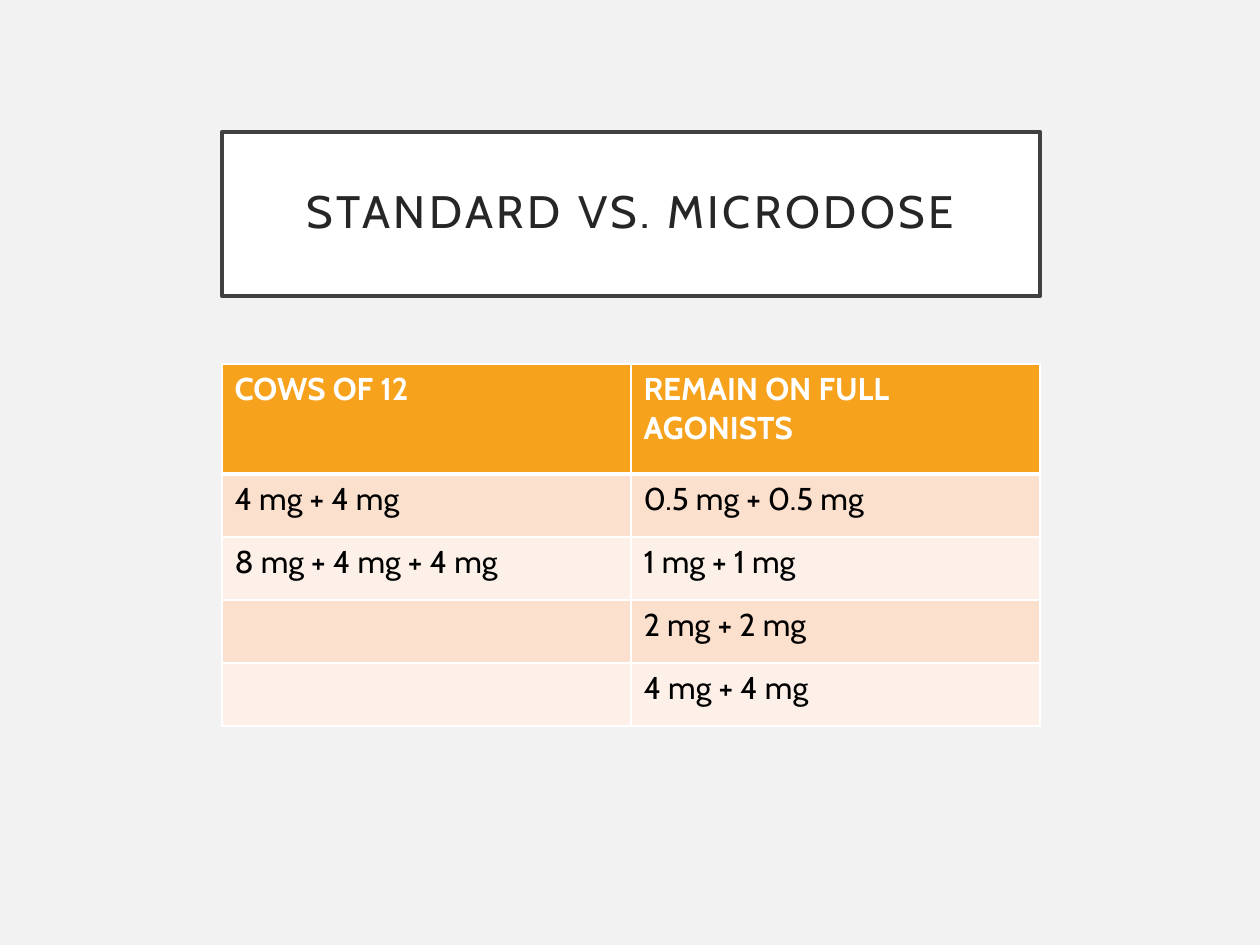
"""Build the slide comparing standard and microdose schedules."""
from lxml.etree import SubElement
from pptx import Presentation
from pptx.dml.color import RGBColor
from pptx.enum.shapes import MSO_SHAPE
from pptx.enum.text import MSO_ANCHOR, PP_ALIGN
from pptx.oxml import parse_xml
from pptx.oxml.ns import nsdecls, qn
from pptx.util import Emu, Pt

EMU_PER_PX = 914400 // 126
FONT = "Cabin"
COLORS = {
    "page": "F2F2F2",
    "white": "FFFFFF",
    "frame": "404040",
    "title": "262626",
    "header": "F6A21D",
    "odd_row": "FBE0CD",
    "even_row": "FDF0E8",
    "body": "000000",
}
LEFT, WIDTH = 222, 818
HEADER_HEIGHT, ROW_HEIGHT = 110, 63
DOSES = [
    ("COWS OF 12", "REMAIN ON FULL AGONISTS"),
    ("4 mg + 4 mg", "0.5 mg + 0.5 mg"),
    ("8 mg + 4 mg + 4 mg", "1 mg + 1 mg"),
    ("", "2 mg + 2 mg"),
    ("", "4 mg + 4 mg"),
]


def px(length):
    return Emu(length * EMU_PER_PX)


def color(name):
    return RGBColor.from_string(COLORS[name])


def paint(fill, name):
    fill.solid()
    fill.fore_color.rgb = color(name)


def style_text(text_frame, size, color_name, bold=False):
    for paragraph in text_frame.paragraphs:
        for span in paragraph.runs:
            span.font.name = FONT
            span.font.size = Pt(size)
            span.font.bold = bold
            span.font.color.rgb = color(color_name)


def add_title(page, text):
    box = page.shapes.add_shape(
        MSO_SHAPE.RECTANGLE, px(LEFT), px(132), px(WIDTH), px(164)
    )
    box.shadow.inherit = False
    paint(box.fill, "white")
    box.line.color.rgb = color("frame")
    box.line.width = Pt(2.5)
    frame = box.text_frame
    frame.text = text
    frame.word_wrap = True
    frame.vertical_anchor = MSO_ANCHOR.MIDDLE
    frame.margin_left = frame.margin_right = px(25)
    frame.margin_top = frame.margin_bottom = px(25)
    paragraph = frame.paragraphs[0]
    paragraph.alignment = PP_ALIGN.CENTER
    paragraph.line_spacing = 0.9
    style_text(frame, 26, "title")
    paragraph.runs[0].font._element.set("spc", "200")


def set_borders(cell, top, bottom):
    properties = cell._tc.get_or_add_tcPr()
    widths = {"lnL": 1, "lnR": 1, "lnT": top, "lnB": bottom}
    for index, (side, width) in enumerate(widths.items()):
        line = parse_xml(f'<a:{side} {nsdecls("a")} w="{Pt(width)}"/>')
        fill = SubElement(line, qn("a:solidFill"))
        SubElement(fill, qn("a:srgbClr"), val=COLORS["white"])
        properties.insert(index, line)


def add_dose_table(page, rows):
    height = HEADER_HEIGHT + ROW_HEIGHT * (len(rows) - 1)
    columns = len(rows[0])
    table = page.shapes.add_table(
        len(rows), columns, px(LEFT), px(364), px(WIDTH), px(height)
    ).table
    for column in table.columns:
        column.width = px(WIDTH // columns)
    for row_index, texts in enumerate(rows):
        header = row_index == 0
        table.rows[row_index].height = px(HEADER_HEIGHT if header else ROW_HEIGHT)
        band = "odd_row" if row_index % 2 else "even_row"
        for column_index, text in enumerate(texts):
            cell = table.cell(row_index, column_index)
            paint(cell.fill, "header" if header else band)
            set_borders(cell, 3 if row_index == 1 else 1, 3 if header else 1)
            if text:
                cell.text_frame.text = text
                style_text(cell.text_frame, 18, "white" if header else "body", header)


def main():
    deck = Presentation()
    deck.slide_width, deck.slide_height = px(1260), px(945)
    page = deck.slides.add_slide(deck.slide_layouts[6])
    paint(page.background.fill, "page")
    add_title(page, "STANDARD VS. MICRODOSE")
    add_dose_table(page, DOSES)
    deck.save("out.pptx")


if __name__ == "__main__":
    main()
